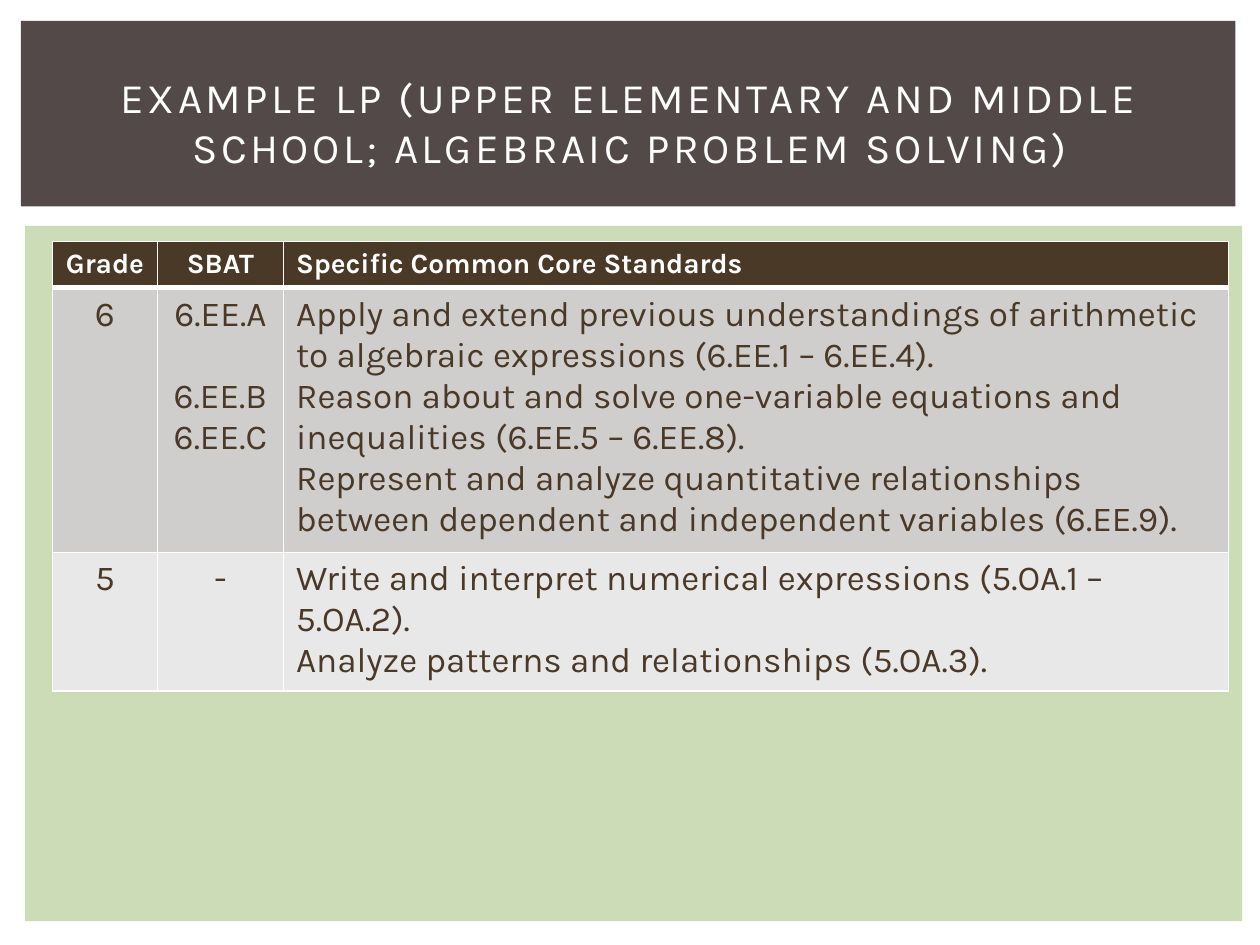
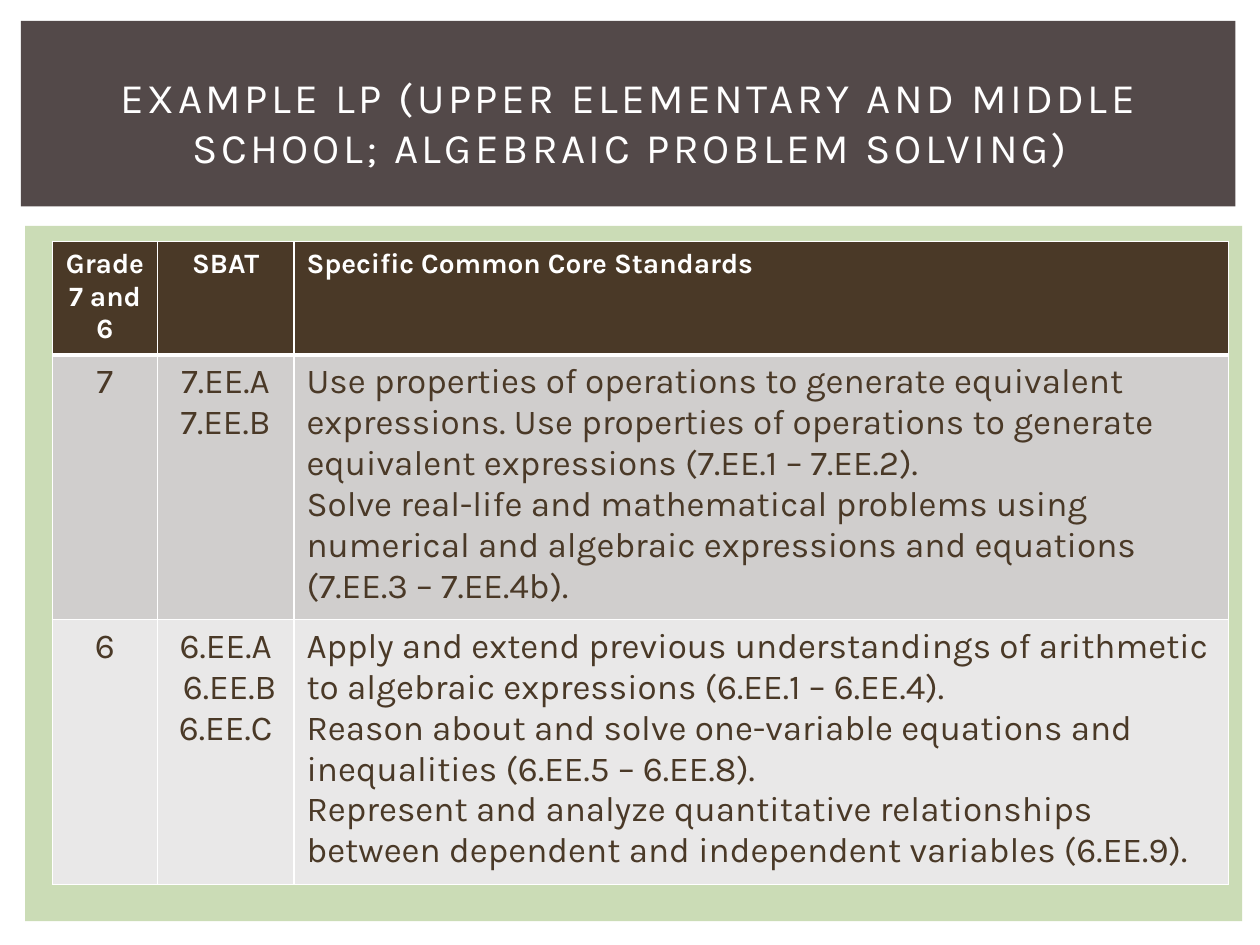
from lxml import etree
from pptx import Presentation
from pptx.dml.color import RGBColor
from pptx.enum.shapes import MSO_SHAPE
from pptx.enum.text import MSO_ANCHOR, PP_ALIGN
from pptx.oxml.ns import qn
from pptx.util import Pt

RECT = MSO_SHAPE.RECTANGLE
MIDDLE = MSO_ANCHOR.MIDDLE
CENTER, LEFT = PP_ALIGN.CENTER, PP_ALIGN.LEFT

# Shared style
FONT = "Karla"
WHITE, BROWN, GREEN, BAND = "FFFFFF", "4A3927", "CBDCB6", "534949"
ROWS = [BROWN, "D0CECD", "E9E8E8"]
TITLE = ("EXAMPLE LP (UPPER ELEMENTARY AND MIDDLE SCHOOL; "
         "ALGEBRAIC PROBLEM SOLVING)")
THIN, THICK = 1, 3

# Standards used on both slides
CODES = ["6.EE.A", "6.EE.B", "6.EE.C"]
GOALS = [
    "Apply and extend previous understandings of arithmetic to algebraic "
    "expressions (6.EE.1 – 6.EE.4).",
    "Reason about and solve one-variable equations and inequalities "
    "(6.EE.5 – 6.EE.8).",
    "Represent and analyze quantitative relationships between dependent "
    "and independent variables (6.EE.9).",
]


def color(code):
    return RGBColor.from_string(code)


class Deck:
    def __init__(self):
        self.prs = Presentation()
        self.prs.slide_width, self.prs.slide_height = Pt(720), Pt(540)
        self.slide = None

    def page(self):
        """Start a slide with its panel, band and title."""
        self.slide = self.prs.slides.add_slide(self.prs.slide_layouts[6])
        self.block(14.4, 129, 695.5, 397.4, GREEN)
        self.block(12, 12, 694, 106, BAND)
        self.title(30, 28, 660, 83)

    def block(self, x, y, w, h, fill):
        box = self.slide.shapes.add_shape(RECT, Pt(x), Pt(y), Pt(w), Pt(h))
        box.shadow.inherit = False
        box.fill.solid()
        box.fill.fore_color.rgb = color(fill)
        box.line.fill.background()

    def title(self, x, y, w, h):
        box = self.slide.shapes.add_textbox(Pt(x), Pt(y), Pt(w), Pt(h))
        frame = box.text_frame
        frame.word_wrap = True
        frame.vertical_anchor = MIDDLE
        para = frame.paragraphs[0]
        para.alignment = CENTER
        self.run(para, TITLE, 24, WHITE).font._element.set("spc", "200")

    def run(self, para, text, size, ink, bold=False):
        run = para.add_run()
        run.text = text
        font = run.font
        font.name, font.size, font.bold = FONT, Pt(size), bold
        font.color.rgb = color(ink)
        return run

    def edge(self, cell, side, width):
        line = etree.SubElement(cell._tc.get_or_add_tcPr(), qn("a:ln" + side))
        line.set("w", str(Pt(width)))
        fill = etree.SubElement(line, qn("a:solidFill"))
        etree.SubElement(fill, qn("a:srgbClr")).set("val", WHITE)

    def cell(self, cell, lines, row, col):
        # Borders come before the fill; the header has a heavy rule below
        for side in "LRTB":
            heavy = (row, side) in ((0, "B"), (1, "T"))
            self.edge(cell, side, THICK if heavy else THIN)
        cell.fill.solid()
        cell.fill.fore_color.rgb = color(ROWS[row])
        size, ink = (20, BROWN) if row else (16, WHITE)
        frame = cell.text_frame
        for n, line in enumerate(lines):
            para = frame.add_paragraph() if n else frame.paragraphs[0]
            para.alignment = LEFT if col == 2 else CENTER
            for k, part in enumerate(line.split("\n")):
                if k:
                    para.add_line_break()
                self.run(para, part, size, ink, row == 0)

    def table(self, cols, highs, rows):
        frame = self.slide.shapes.add_table(
            len(rows), len(cols), Pt(30), Pt(138), Pt(sum(cols)), Pt(sum(highs)))
        table = frame.table
        for col, width in zip(table.columns, cols):
            col.width = Pt(width)
        for r, cells in enumerate(rows):
            table.rows[r].height = Pt(highs[r])
            for c, lines in enumerate(cells):
                self.cell(table.cell(r, c), lines, r, c)
        return table


def head(grade):
    return [[grade], ["SBAT"], ["Specific Common Core Standards"]]


def main():
    deck = Deck()

    # Grades 6 and 5
    deck.page()
    table = deck.table([60, 72, 540], [25.2, 147, 77], [
        head("Grade"),
        [["6"], CODES, GOALS],
        [["5"], ["-"], [
            "Write and interpret numerical expressions (5.OA.1 – 5.OA.2).",
            "Analyze patterns and relationships (5.OA.3)."]],
    ])
    # Second code lines up with the second standard
    table.cell(1, 1).text_frame.paragraphs[1].space_before = Pt(23.4)

    # Grades 7 and 6
    deck.page()
    table = deck.table([60, 78, 534], [63, 147, 147], [
        head("Grade\n7 and 6"),
        [["7"], ["7.EE.A", "7.EE.B"], [
            "Use properties of operations to generate equivalent expressions. "
            "Use properties of operations to generate equivalent expressions "
            "(7.EE.1 – 7.EE.2).",
            "Solve real-life and mathematical problems using numerical and "
            "algebraic expressions and equations (7.EE.3 – 7.EE.4b)."]],
        [["6"], CODES, GOALS],
    ])
    # Second code sits a little to the right
    code = table.cell(2, 1).text_frame.paragraphs[1]
    code._p.get_or_add_pPr().set("marL", str(Pt(4.6)))

    deck.prs.save("out.pptx")


if __name__ == "__main__":
    main()
